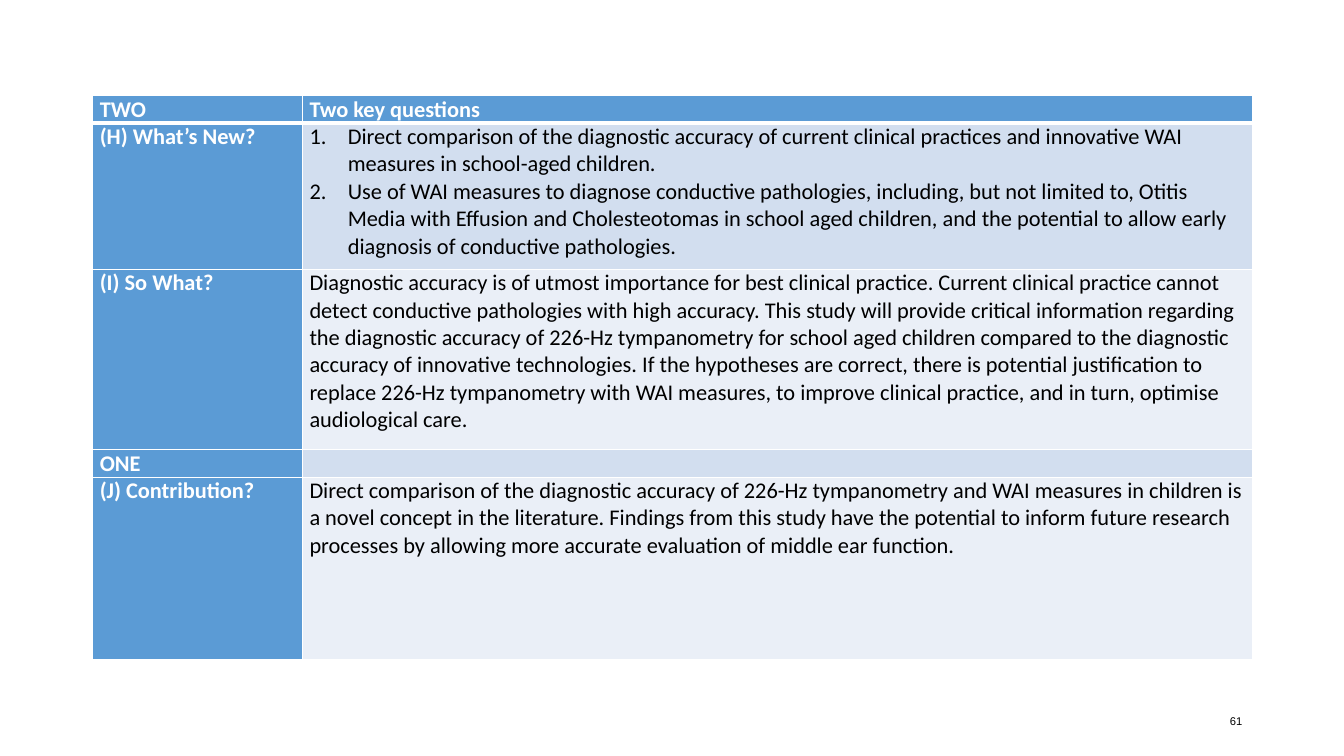
from lxml.etree import SubElement
from pptx import Presentation
from pptx.dml.color import RGBColor
from pptx.enum.text import MSO_ANCHOR, PP_ALIGN
from pptx.oxml import parse_xml
from pptx.oxml.ns import nsdecls, qn
from pptx.util import Pt

PX = 9144
COLORS = {
    "header": "5B9BD5",
    "odd_row": "D2DEEF",
    "even_row": "EAEFF7",
    "border": "FFFFFF",
    "label": "FFFFFF",
    "body": "000000",
}
COLUMN_WIDTHS = [208, 942]
ROW_HEIGHTS = [27, 145, 179, 27, 181]
ROWS = [
    ("TWO", ["Two key questions"]),
    ("(H) What’s New?", [
        "Direct comparison of the diagnostic accuracy of current clinical practices and "
        "innovative WAI measures in school-aged children.",
        "Use of WAI measures to diagnose conductive pathologies, including, but not limited to, "
        "Otitis Media with Effusion and Cholesteotomas in school aged children, and the potential "
        "to allow early diagnosis of conductive pathologies.",
    ]),
    ("(I) So What?", [
        "Diagnostic accuracy is of utmost importance for best clinical practice. Current clinical "
        "practice cannot detect conductive pathologies with high accuracy. This study will provide "
        "critical information regarding the diagnostic accuracy of 226-Hz tympanometry for school "
        "aged children compared to the diagnostic accuracy of innovative technologies. If the "
        "hypotheses are correct, there is potential justification to replace 226-Hz tympanometry "
        "with WAI measures, to improve clinical practice, and in turn, optimise audiological care.",
    ]),
    ("ONE", []),
    ("(J) Contribution?", [
        "Direct comparison of the diagnostic accuracy of 226-Hz tympanometry and WAI measures in "
        "children is a novel concept in the literature. Findings from this study have the potential "
        "to inform future research processes by allowing more accurate evaluation of middle ear "
        "function.",
    ]),
]


def style_run(run, font_name, size, color, bold=False):
    run.font.name = font_name
    run.font.size = Pt(size)
    run.font.bold = bold
    run.font.color.rgb = RGBColor.from_string(COLORS[color])


def set_borders(cell, widths):
    properties = cell._tc.get_or_add_tcPr()
    for index, (side, width) in enumerate(widths.items()):
        properties.insert(index, parse_xml(
            f'<a:ln{side} {nsdecls("a")} w="{Pt(width)}"><a:solidFill>'
            f'<a:srgbClr val="{COLORS["border"]}"/></a:solidFill></a:ln{side}>'))


presentation = Presentation()
presentation.slide_width = 1333 * PX
presentation.slide_height = 750 * PX
slide = presentation.slides.add_slide(presentation.slide_layouts[6])

table = slide.shapes.add_table(
    len(ROWS), 2, 92 * PX, 95 * PX, sum(COLUMN_WIDTHS) * PX, sum(ROW_HEIGHTS) * PX).table
for column, width in zip(table.columns, COLUMN_WIDTHS):
    column.width = width * PX
for row, height in zip(table.rows, ROW_HEIGHTS):
    row.height = height * PX

for row_index, (label, texts) in enumerate(ROWS):
    for column_index, lines in enumerate([[label], texts]):
        cell = table.cell(row_index, column_index)
        is_header = row_index == 0 or column_index == 0
        band = "odd_row" if row_index % 2 else "even_row"
        cell.margin_left = cell.margin_right = 7 * PX
        cell.margin_top = cell.margin_bottom = 0
        cell.fill.solid()
        cell.fill.fore_color.rgb = RGBColor.from_string(COLORS["header" if is_header else band])
        set_borders(cell, {
            "L": 1,
            "R": 1,
            "T": 3 if row_index == 1 else 1,
            "B": 3 if row_index == 0 else 1,
        })
        cell.text_frame.text = "\n".join(lines)
        for paragraph in cell.text_frame.paragraphs:
            for run in paragraph.runs:
                style_run(run, "Calibri", 16, "label" if is_header else "body", is_header)
            if not lines:
                SubElement(paragraph._p, qn("a:endParaRPr"), sz="1600")
            if len(lines) > 1:
                paragraph_properties = paragraph._p.get_or_add_pPr()
                paragraph_properties.set("marL", str(38 * PX))
                paragraph_properties.set("indent", str(-38 * PX))
                SubElement(paragraph_properties, qn("a:buFont"), typeface="+mj-lt")
                SubElement(paragraph_properties, qn("a:buAutoNum"), type="arabicPeriod")

page_number = slide.shapes.add_textbox(942 * PX, 695 * PX, 300 * PX, 40 * PX)
text_frame = page_number.text_frame
text_frame.word_wrap = True
text_frame.vertical_anchor = MSO_ANCHOR.MIDDLE
text_frame.text = "61"
paragraph = text_frame.paragraphs[0]
paragraph.alignment = PP_ALIGN.RIGHT
style_run(paragraph.runs[0], "Arial", 8, "body")

presentation.save("out.pptx")
